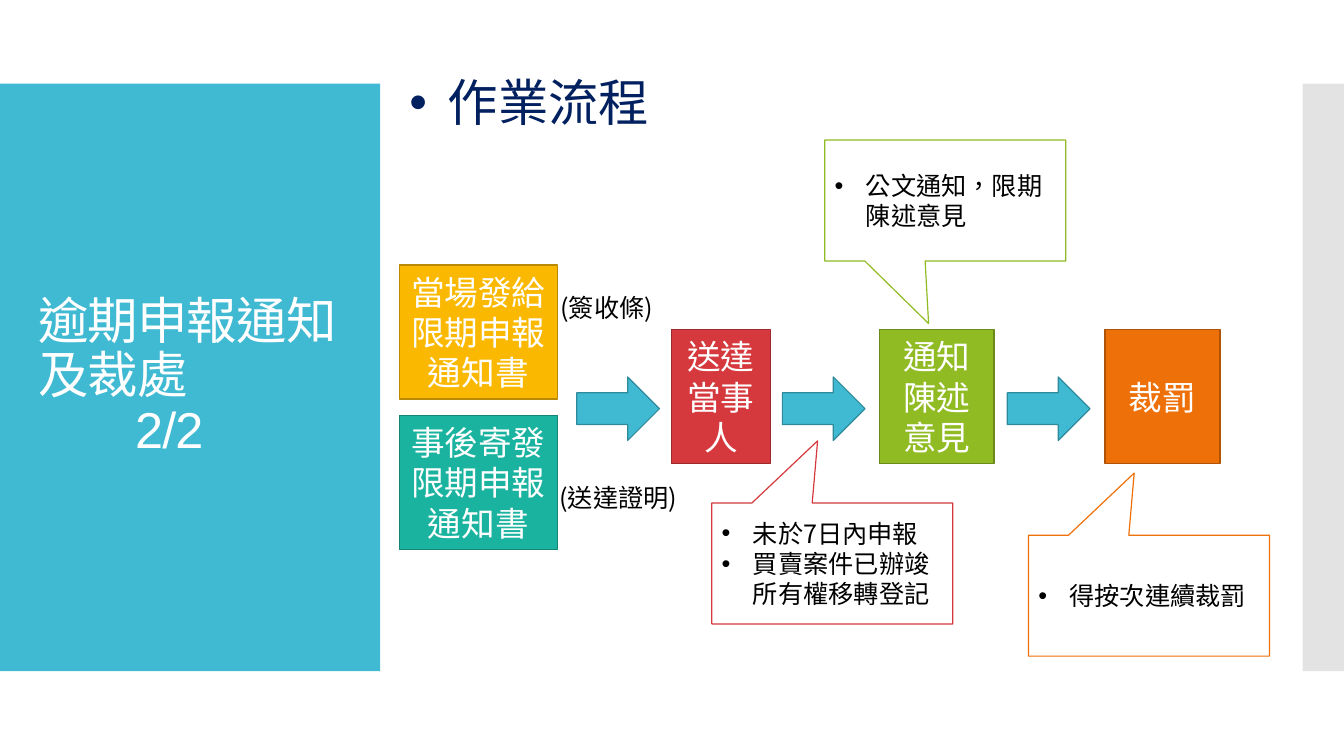
from lxml.etree import SubElement
from pptx import Presentation
from pptx.dml.color import RGBColor
from pptx.enum.shapes import MSO_SHAPE
from pptx.enum.text import MSO_ANCHOR, MSO_AUTO_SIZE, PP_ALIGN
from pptx.oxml.ns import qn
from pptx.util import Inches, Pt

WHITE, BLACK = RGBColor(255, 255, 255), RGBColor(0, 0, 0)
NAVY, GREY = RGBColor(0x00, 0x20, 0x60), RGBColor(0xC8, 0xC8, 0xC8)
CYAN, CYAN_DK = RGBColor(0x40, 0xBA, 0xD2), RGBColor(0x2F, 0x8A, 0x9B)
GOLD, GOLD_DK = RGBColor(0xFA, 0xB9, 0x00), RGBColor(0xB9, 0x89, 0x00)
TEAL, TEAL_DK = RGBColor(0x1A, 0xB3, 0x9F), RGBColor(0x13, 0x84, 0x76)
RED, RED_DK = RGBColor(0xD5, 0x39, 0x3D), RGBColor(0x9E, 0x2A, 0x2D)
GREEN, GREEN_DK = RGBColor(0x90, 0xBB, 0x23), RGBColor(0x6B, 0x8A, 0x1A)
ORANGE, ORANGE_DK = RGBColor(0xEE, 0x70, 0x08), RGBColor(0xB0, 0x53, 0x06)
CJK = "Noto Sans CJK SC"

# Content
TITLE, PAGE = "逾期申報通知及裁處", "2/2"
HEADING = "作業流程"
STEPS = [  # text, left, top, width, fill, line
    ("當場發給限期申報通知書", 3.96, 2.63, 1.57, GOLD, GOLD_DK),
    ("事後寄發限期申報通知書", 3.96, 4.12, 1.57, TEAL, TEAL_DK),
    ("送達當事人", 6.66, 3.27, 0.98, RED, RED_DK),
    ("通知陳述意見", 8.72, 3.27, 1.14, GREEN, GREEN_DK),
    ("裁罰", 10.96, 3.27, 1.14, ORANGE, ORANGE_DK),
]
ARROW_LEFTS = [5.72, 7.76, 9.99]
NOTES = [("(送達證明)", 5.45, 4.74), ("(簽收條)", 5.46, 2.85)]
CALLOUTS = [  # lines, left, top, pointer, line
    (["未於7日內申報", "買賣案件已辦竣所有權移轉登記"], 7.06, 4.99, (-0.061, -1.014), RED),
    (["得按次連續裁罰"], 10.2, 5.31, (-0.061, -1.014), ORANGE),
    (["公文通知，限期陳述意見"], 8.18, 1.39, (-0.069, 1.017), GREEN),
]

prs = Presentation()
prs.slide_width, prs.slide_height = Inches(13.33), Inches(7.5)
s = prs.slides.add_slide(prs.slide_layouts[1])


def place(sp, *box):
    for name, value in zip(("left", "top", "width", "height"), box):
        setattr(sp, name, Inches(value))


def add_shape(kind, box, fill, line=None):
    sp = s.shapes.add_shape(kind, *map(Inches, box))
    sp.shadow.inherit = False
    sp.fill.solid()
    sp.fill.fore_color.rgb = fill
    if line is None:
        sp.line.fill.background()
    else:
        sp.line.color.rgb = line
        sp.line.width = Pt(0.85)
    return sp


def write(sp, lines, size, color, font=CJK, align=PP_ALIGN.LEFT,
          anchor=MSO_ANCHOR.MIDDLE, indent=0, spacing=1.0):
    tf = sp.text_frame
    frame = {"word_wrap": True, "auto_size": MSO_AUTO_SIZE.NONE, "vertical_anchor": anchor}
    for name, value in frame.items():
        setattr(tf, name, value)
    para = {"alignment": align, "line_spacing": spacing, "space_before": Pt(0)}
    for i, line in enumerate(lines):
        p = tf.paragraphs[0] if i == 0 else tf.add_paragraph()
        for name, value in para.items():
            setattr(p, name, value)
        r = p.add_run()
        r.text = line
        r.font.color.rgb = color
        for name, value in {"size": Pt(size), "name": font}.items():
            setattr(r.font, name, value)
        rPr = r._r.get_or_add_rPr()
        rPr.set("lang", "zh-TW")
        SubElement(rPr, qn("a:ea")).set("typeface", CJK)
        if indent:
            pPr = p._p.get_or_add_pPr()
            pPr.set("marL", str(Inches(indent)))
            pPr.set("indent", str(-Inches(indent)))
            SubElement(pPr, qn("a:buFont")).set("typeface", "Arial")
            SubElement(pPr, qn("a:buChar")).set("char", "•")


# Side panels, behind the placeholders
panel = add_shape(MSO_SHAPE.RECTANGLE, (0, 0.83, 3.77, 5.83), CYAN)
bar = add_shape(MSO_SHAPE.RECTANGLE, (12.92, 0.83, 0.41, 5.83), GREY)
bar_color = bar._element.spPr.find(qn("a:solidFill"))[0]
SubElement(bar_color, qn("a:alpha")).set("val", "50000")
for sp in (bar, panel):
    s.shapes._spTree.insert(2, sp._element)

# Title and heading
title, body = s.shapes.title, s.placeholders[1]
place(title, 0.28, 1.23, 3.22, 5.03)
write(title, [TITLE, PAGE], 36, WHITE, "Calibri", spacing=0.9)
for p in title.text_frame.paragraphs:
    p.runs[0]._r.get_or_add_rPr().set("spc", "-60")
page = title.text_frame.paragraphs[1]
page.runs[0].font.name = "Arial"
page._p.get_or_add_pPr().set("marL", str(Inches(0.96)))
place(body, 3.96, 0.66, 8.35, 0.71)
write(body, [HEADING], 36, NAVY, anchor=MSO_ANCHOR.TOP, indent=0.38)

# Process steps
for text, left, top, width, fill, line in STEPS:
    sp = add_shape(MSO_SHAPE.RECTANGLE, (left, top, width, 1.33), fill, line)
    write(sp, [text], 24, WHITE, align=PP_ALIGN.CENTER)

# Arrows between steps
for left in ARROW_LEFTS:
    add_shape(MSO_SHAPE.RIGHT_ARROW, (left, 3.74, 0.82, 0.63), CYAN, CYAN_DK)

# Delivery notes
for text, left, top in NOTES:
    sp = s.shapes.add_textbox(*map(Inches, (left, top, 1.47, 0.4)))
    write(sp, [text], 18, BLACK, anchor=MSO_ANCHOR.TOP)

# Callouts
for lines, left, top, pointer, line in CALLOUTS:
    sp = add_shape(MSO_SHAPE.RECTANGULAR_CALLOUT, (left, top, 2.39, 1.2), WHITE, line)
    for i, value in enumerate(pointer):
        sp.adjustments[i] = value
    write(sp, lines, 18, BLACK, indent=0.31)

prs.save("out.pptx")
